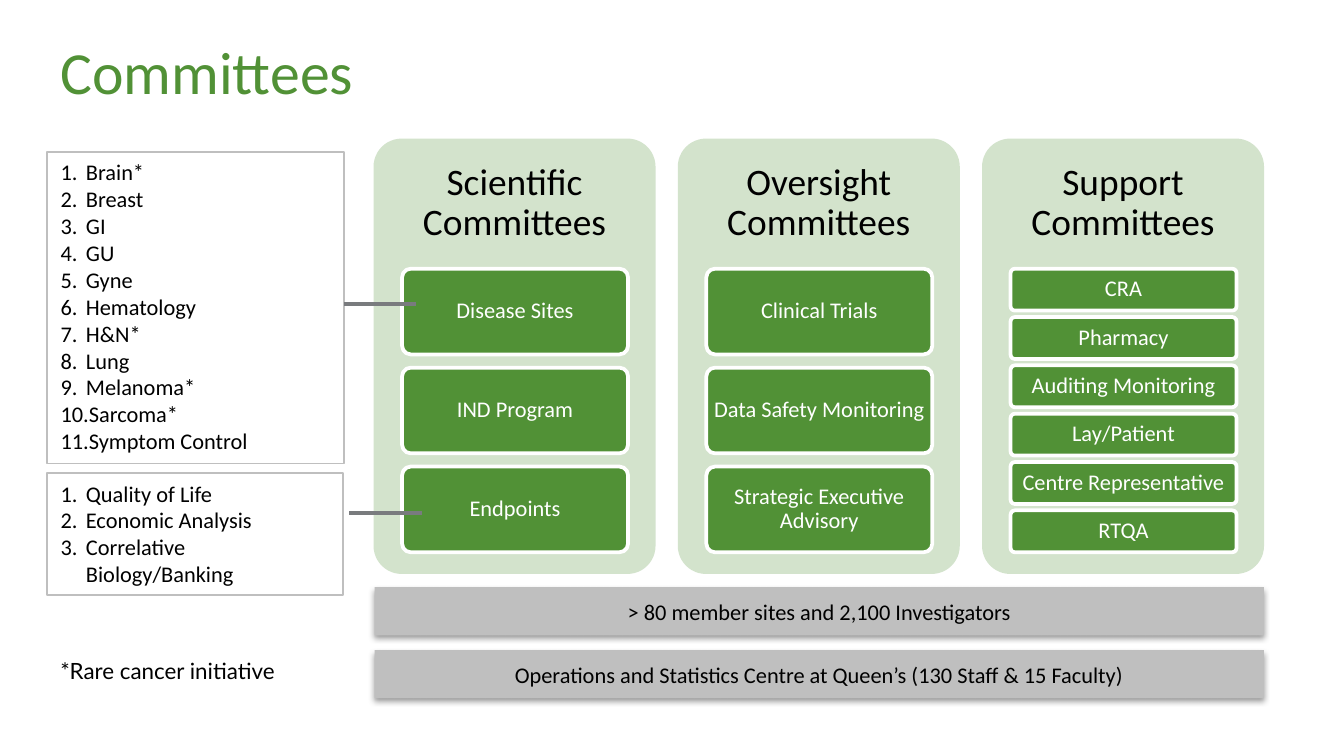
from dataclasses import dataclass

from lxml import etree
from pptx import Presentation
from pptx.dml.color import RGBColor
from pptx.enum.shapes import MSO_CONNECTOR, MSO_SHAPE
from pptx.enum.text import MSO_ANCHOR, MSO_AUTO_SIZE, PP_ALIGN
from pptx.oxml.ns import qn
from pptx.util import Cm, Pt

RECT, ROUNDED = MSO_SHAPE.RECTANGLE, MSO_SHAPE.ROUNDED_RECTANGLE
STRAIGHT = MSO_CONNECTOR.STRAIGHT
TOP, MIDDLE = MSO_ANCHOR.TOP, MSO_ANCHOR.MIDDLE
LEFT, CENTER = PP_ALIGN.LEFT, PP_ALIGN.CENTER
NO_AUTOFIT = MSO_AUTO_SIZE.NONE

GREEN, GRAY, LINE_GRAY = "519136", "BFBFBF", "797B7E"
BLACK, WHITE = "000000", "FFFFFF"
FONT = "Calibri"

# Lengths in cm
MARGIN = 0.89
PANEL_LEFT, PANEL_TOP, PANEL_W, PANEL_H, PANEL_PITCH = 7.06, 2.62, 5.33, 8.23, 5.75
HEADING_H = 2.46
CARD_INDENT, CARD_W, CARDS_H = 0.54, 4.27, 5.36
GAP_RATIO = 0.154  # gap between cards, relative to card height


@dataclass
class Box:
    left: float
    top: float
    width: float
    height: float

    def emu(self) -> tuple:
        return Cm(self.left), Cm(self.top), Cm(self.width), Cm(self.height)


@dataclass
class Committee:
    heading: str
    cards: list[str]


@dataclass
class NumberedList:
    box: Box
    items: list[str]


@dataclass
class Bar:
    top: float
    text: str


@dataclass
class Link:
    left: float
    y: float


COMMITTEES = [
    Committee("Scientific Committees", ["Disease Sites", "IND Program", "Endpoints"]),
    Committee("Oversight Committees", ["Clinical Trials", "Data Safety Monitoring",
                                       "Strategic Executive Advisory"]),
    Committee("Support Committees", ["CRA", "Pharmacy", "Auditing Monitoring", "Lay/Patient",
                                     "Centre Representative", "RTQA"]),
]
LISTS = [
    NumberedList(Box(MARGIN, 2.87, 5.61, 5.89),
                 ["Brain*", "Breast", "GI", "GU", "Gyne", "Hematology", "H&N*", "Lung",
                  "Melanoma*", "Sarcoma*", "Symptom Control"]),
    NumberedList(Box(MARGIN, 8.94, 5.59, 2.31),
                 ["Quality of Life", "Economic Analysis", "Correlative Biology/Banking"]),
]
BARS = [
    Bar(11.1, "> 80 member sites and 2,100 Investigators"),
    Bar(12.29, "Operations and Statistics Centre at Queen’s (130 Staff & 15 Faculty)"),
]
LINKS = [Link(6.6, 9.7), Link(6.5, 5.74)]
LINK_W = 1.37


def rgb(color: str) -> RGBColor:
    return RGBColor.from_string(color)


def add_run(p, text: str, size: float, color: str, font: str = FONT) -> None:
    r = p.add_run()
    r.text = text
    r.font.size = Pt(size)
    r.font.name = font
    r.font.color.rgb = rgb(color)


def centre_text(sp, text: str, size: float, color: str, inset: float,
                spacing: float = 1.0) -> None:
    tf = sp.text_frame
    tf.word_wrap = True
    tf.vertical_anchor = MIDDLE
    tf.margin_left = tf.margin_right = tf.margin_top = tf.margin_bottom = Cm(inset)
    p = tf.paragraphs[0]
    p.alignment = CENTER
    p.line_spacing = spacing
    add_run(p, text, size, color)


def add_block(s, kind, box: Box, fill: str):
    """Add a filled shape without line or shadow."""
    sp = s.shapes.add_shape(kind, *box.emu())
    sp.shadow.inherit = False
    sp.fill.solid()
    sp.fill.fore_color.rgb = rgb(fill)
    sp.line.fill.background()
    if kind == ROUNDED:
        sp.adjustments[0] = 0.1
    return sp


def set_alpha(parent, percent: int) -> None:
    """Set the opacity of the first colour below an element."""
    color = next(parent.iter(qn("a:srgbClr")))
    etree.SubElement(color, qn("a:alpha"), val=str(percent * 1000))


def add_committee(s, left: float, committee: Committee) -> None:
    panel = add_block(s, ROUNDED, Box(left, PANEL_TOP, PANEL_W, PANEL_H), GREEN)
    set_alpha(panel.fill.fore_color._xFill, 25)
    heading = s.shapes.add_textbox(*Box(left, PANEL_TOP, PANEL_W, HEADING_H).emu())
    centre_text(heading, committee.heading, 20, BLACK, 0.2, 0.9)

    count = len(committee.cards)
    height = CARDS_H / (count + (count - 1) * GAP_RATIO)
    for i, text in enumerate(committee.cards):
        top = PANEL_TOP + HEADING_H + i * height * (1 + GAP_RATIO)
        card = add_block(s, ROUNDED, Box(left + CARD_INDENT, top, CARD_W, height), GREEN)
        card.line.color.rgb = rgb(WHITE)
        card.line.width = Pt(2)
        centre_text(card, text, 12, WHITE, 0.06, 0.9)


def fill_list(sp, numbered: NumberedList) -> None:
    sp.left, sp.top, sp.width, sp.height = numbered.box.emu()
    sp.line.color.rgb = rgb(GRAY)
    sp.line.width = Pt(0.75)
    tf = sp.text_frame
    tf.auto_size = NO_AUTOFIT
    tf.vertical_anchor = TOP
    for i, item in enumerate(numbered.items):
        p = tf.add_paragraph() if i else tf.paragraphs[0]
        pPr = p._p.get_or_add_pPr()
        pPr.set("marL", str(Cm(0.48)))
        pPr.set("indent", str(-Cm(0.48)))
        etree.SubElement(pPr, qn("a:buFont"), typeface=FONT)
        etree.SubElement(pPr, qn("a:buAutoNum"), type="arabicPeriod")
        p.space_before = Pt(0)
        add_run(p, item, 12, BLACK)


def add_bar(s, bar: Bar) -> None:
    width = 2 * PANEL_PITCH + PANEL_W
    sp = add_block(s, RECT, Box(PANEL_LEFT + 0.02, bar.top, width - 0.02, 0.91), GRAY)
    effects = sp._element.spPr.find(qn("a:effectLst"))
    shadow = etree.SubElement(effects, qn("a:outerShdw"), blurRad=str(Pt(3.1)),
                              dist=str(Pt(1.6)), dir="5400000", rotWithShape="0")
    etree.SubElement(shadow, qn("a:srgbClr"), val=BLACK)
    set_alpha(shadow, 38)
    centre_text(sp, bar.text, 12, BLACK, 0.1)


def add_link(s, link: Link) -> None:
    y = Cm(link.y)
    line = s.shapes.add_connector(STRAIGHT, Cm(link.left), y, Cm(link.left + LINK_W), y)
    line.line.color.rgb = rgb(LINE_GRAY)
    line.line.width = Pt(2)
    etree.SubElement(line._element.spPr, qn("a:effectLst"))


def main() -> None:
    prs = Presentation()
    prs.slide_width, prs.slide_height = Cm(25.4), Cm(14.29)
    s = prs.slides.add_slide(prs.slide_layouts.get_by_name("Two Content"))

    title = s.shapes.title
    title.left, title.top, title.width, title.height = Box(MARGIN, 0.76, 23.6, 1.14).emu()
    tf = title.text_frame
    tf.auto_size = NO_AUTOFIT
    tf.vertical_anchor = MIDDLE
    tf.paragraphs[0].alignment = LEFT
    add_run(tf.paragraphs[0], "Committees", 32, GREEN)

    for idx, numbered in enumerate(LISTS, start=1):
        fill_list(s.placeholders[idx], numbered)
    for i, committee in enumerate(COMMITTEES):
        add_committee(s, PANEL_LEFT + i * PANEL_PITCH, committee)
    for bar in BARS:
        add_bar(s, bar)
    for link in LINKS:
        add_link(s, link)

    footnote = s.shapes.add_textbox(*Box(MARGIN, 12.29, 4.57, 0.76).emu())
    add_run(footnote.text_frame.paragraphs[0], "*Rare cancer initiative", 12, BLACK, "Lato")
    prs.save("out.pptx")


if __name__ == "__main__":
    main()
